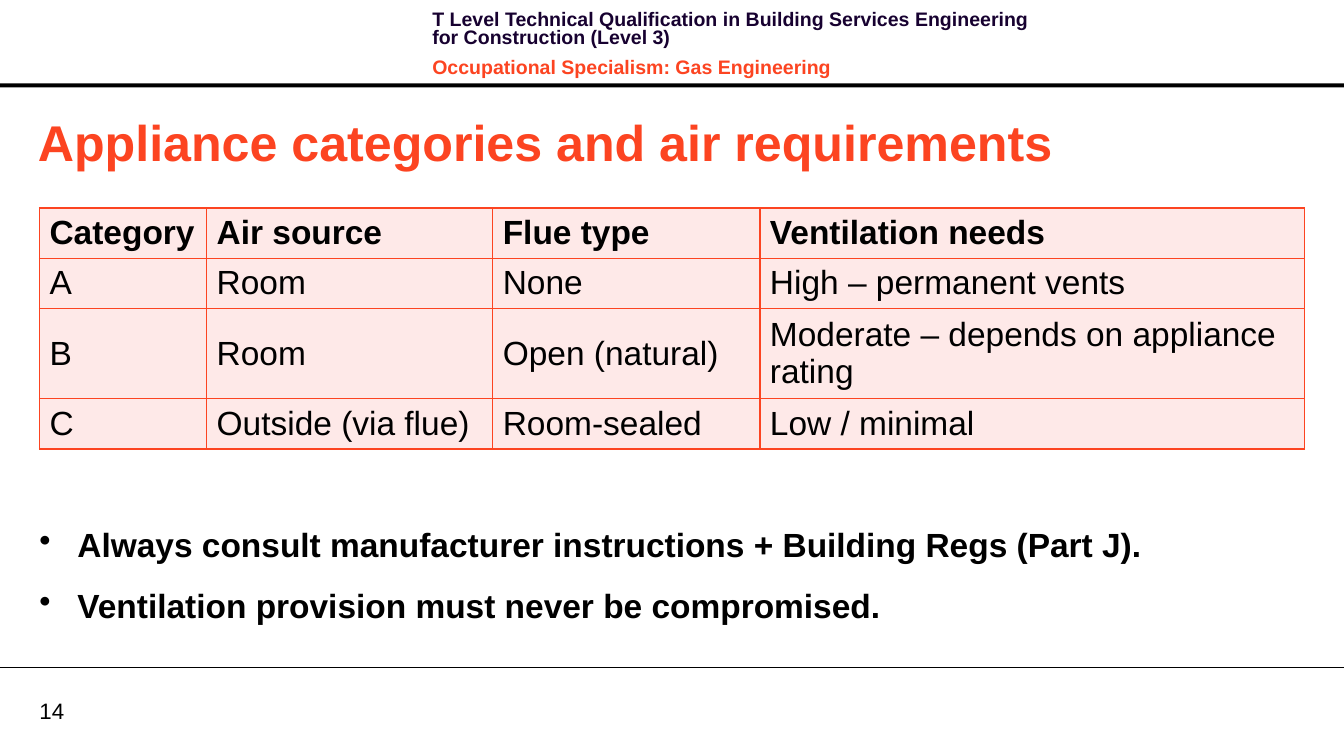
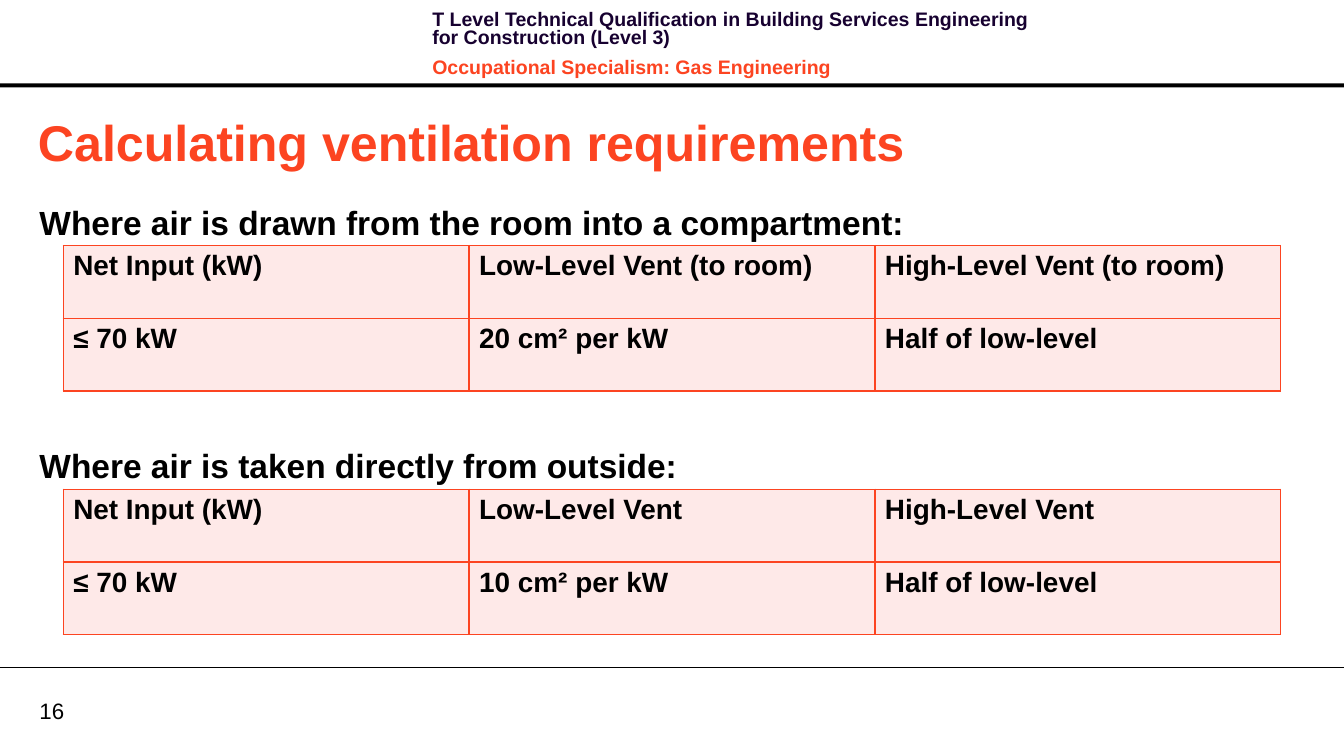
from lxml.etree import SubElement
from pptx import Presentation
from pptx.dml.color import RGBColor
from pptx.enum.shapes import MSO_CONNECTOR, MSO_SHAPE
from pptx.enum.text import MSO_ANCHOR, PP_ALIGN
from pptx.oxml import parse_xml
from pptx.oxml.ns import nsdecls, qn
from pptx.util import Cm, Pt

FONT = "Arial"
BLACK = "000000"
NAVY = "170130"
ORANGE = "FC4421"
PINK = "FEE9E8"
PAGE_WIDTH, PAGE_HEIGHT = 34.01, 19
MARGIN = 1
INDENT = 0.96

COURSE = "T Level Technical Qualification in Building Services Engineering for Construction (Level 3)"
SPECIALISM = "Occupational Specialism: Gas Engineering"

CATEGORY_ROWS = [
    ["Category", "Air source", "Flue type", "Ventilation needs"],
    ["A", "Room", "None", "High – permanent vents"],
    ["B", "Room", "Open (natural)", "Moderate – depends on appliance rating"],
    ["C", "Outside (via flue)", "Room-sealed", "Low / minimal"],
]
RULES = [
    "Always consult manufacturer instructions + Building Regs (Part J).",
    "Ventilation provision must never be compromised.",
]
VENT_SECTIONS = [
    ("Where air is drawn from the room into a compartment:", [
        ["Net Input (kW)", "Low-Level Vent (to room)", "High-Level Vent (to room)"],
        ["≤ 70 kW", "20 cm² per kW", "Half of low-level"],
    ]),
    ("Where air is taken directly from outside:", [
        ["Net Input (kW)", "Low-Level Vent", "High-Level Vent"],
        ["≤ 70 kW", "10 cm² per kW", "Half of low-level"],
    ]),
]


def colour(value):
    """Turn a hex string into a colour."""
    return RGBColor.from_string(value)


def write(para, text, size=24, tint=BLACK, bold=False, bullet=False,
          spacing=None, before=None, after=None):
    """Write one formatted paragraph."""
    if bullet:
        properties = para._p.get_or_add_pPr()
        properties.set("marL", str(Cm(INDENT)))
        properties.set("indent", str(-Cm(INDENT)))
        SubElement(properties, qn("a:buChar")).set("char", "•")
    para.alignment = PP_ALIGN.LEFT
    para.line_spacing = spacing
    para.space_before = before
    para.space_after = after
    span = para.add_run()
    span.text = text
    span.font.name = FONT
    span.font.size = Pt(size)
    span.font.bold = bold
    span.font.color.rgb = colour(tint)


def add_box(page, left, top, width, height, anchor=MSO_ANCHOR.TOP, inset=True):
    """Add a wrapping text box and return its text frame."""
    box = page.shapes.add_textbox(Cm(left), Cm(top), Cm(width), Cm(height))
    frame = box.text_frame
    frame.word_wrap = True
    frame.vertical_anchor = anchor
    if not inset:
        frame.margin_left = frame.margin_right = 0
        frame.margin_top = frame.margin_bottom = 0
    return frame


def add_border(cell):
    """Draw a thin orange line on each side of a cell."""
    properties = cell._tc.get_or_add_tcPr()
    for position, side in enumerate(("lnL", "lnR", "lnT", "lnB")):
        properties.insert(position, parse_xml(
            f'<a:{side} {nsdecls("a")} w="{Pt(1)}"><a:solidFill>'
            f'<a:srgbClr val="{ORANGE}"/></a:solidFill></a:{side}>'))


def add_grid(page, rows, left, top, widths, heights, size, anchor, all_bold=False):
    """Add a pink table with orange borders and a bold first row."""
    frame = page.shapes.add_table(
        len(rows), len(widths), Cm(left), Cm(top), Cm(sum(widths)), Cm(sum(heights)))
    table = frame.table
    table.first_row = table.horz_banding = False
    for column, width in zip(table.columns, widths):
        column.width = Cm(width)
    for index, (row, height) in enumerate(zip(table.rows, heights)):
        row.height = Cm(height)
        for cell, text in zip(row.cells, rows[index]):
            cell.fill.solid()
            cell.fill.fore_color.rgb = colour(PINK)
            cell.vertical_anchor = anchor
            add_border(cell)
            write(cell.text_frame.paragraphs[0], text, size=size,
                  bold=all_bold or index == 0)


def add_page(deck, title, number):
    """Add a slide with its header, title, rules and page number."""
    page = deck.slides.add_slide(deck.slide_layouts[6])
    band = page.shapes.add_shape(
        MSO_SHAPE.RECTANGLE, 0, Cm(2.11), Cm(PAGE_WIDTH), Cm(0.1))
    band.shadow.inherit = False
    band.fill.solid()
    band.fill.fore_color.rgb = colour(BLACK)
    band.line.fill.background()
    footer_top = Cm(16.89)
    line = page.shapes.add_connector(
        MSO_CONNECTOR.STRAIGHT, 0, footer_top, Cm(PAGE_WIDTH), footer_top)
    line.line.color.rgb = colour(BLACK)
    line.line.width = Pt(0.75)
    SubElement(line._element.spPr, qn("a:effectLst"))
    header = add_box(page, 10.69, 0.18, 16.18, 1.63)
    write(header.paragraphs[0], COURSE, size=14, tint=NAVY, bold=True,
          spacing=Pt(13.1), after=Pt(4))
    write(header.add_paragraph(), SPECIALISM, size=14, tint=ORANGE, bold=True,
          spacing=Pt(13.1), before=Pt(4), after=Pt(4))
    heading = add_box(page, 0.71, 2.67, 32.3, 1.8, MSO_ANCHOR.MIDDLE)
    write(heading.paragraphs[0], title, size=36, tint=ORANGE, bold=True)
    footer = add_box(page, MARGIN, 17.63, 1.63, 0.69, MSO_ANCHOR.MIDDLE, inset=False)
    write(footer.paragraphs[0], str(number), size=16)
    return page


def add_categories(deck):
    """Build the slide on appliance categories."""
    page = add_page(deck, "Appliance categories and air requirements", 14)
    add_grid(page, CATEGORY_ROWS, MARGIN, 5.26, [4.23, 7.24, 6.76, 13.78],
             [1.2, 1.2, 2.15, 1.2], 24, MSO_ANCHOR.MIDDLE)
    body = add_box(page, MARGIN, 13.16, 30, 3.2, inset=False)
    for index, rule in enumerate(RULES):
        para = body.add_paragraph() if index else body.paragraphs[0]
        write(para, rule, bold=True, bullet=True, spacing=1.1, after=Pt(12))


def add_calculation(deck):
    """Build the slide on ventilation requirements."""
    page = add_page(deck, "Calculating ventilation requirements", 16)
    for index, (label, rows) in enumerate(VENT_SECTIONS):
        top = 5 + 6.17 * index
        heading = add_box(page, MARGIN, top, 31.62, 1.2, inset=False)
        write(heading.paragraphs[0], label, bold=True, spacing=1.1)
        add_grid(page, rows, 1.6, top + 1.21, [10.27] * 3, [1.84] * 2, 20,
                 MSO_ANCHOR.TOP, all_bold=True)


def main():
    """Build and save the deck."""
    deck = Presentation()
    deck.slide_width, deck.slide_height = Cm(PAGE_WIDTH), Cm(PAGE_HEIGHT)
    add_categories(deck)
    add_calculation(deck)
    deck.save("out.pptx")


if __name__ == "__main__":
    main()
